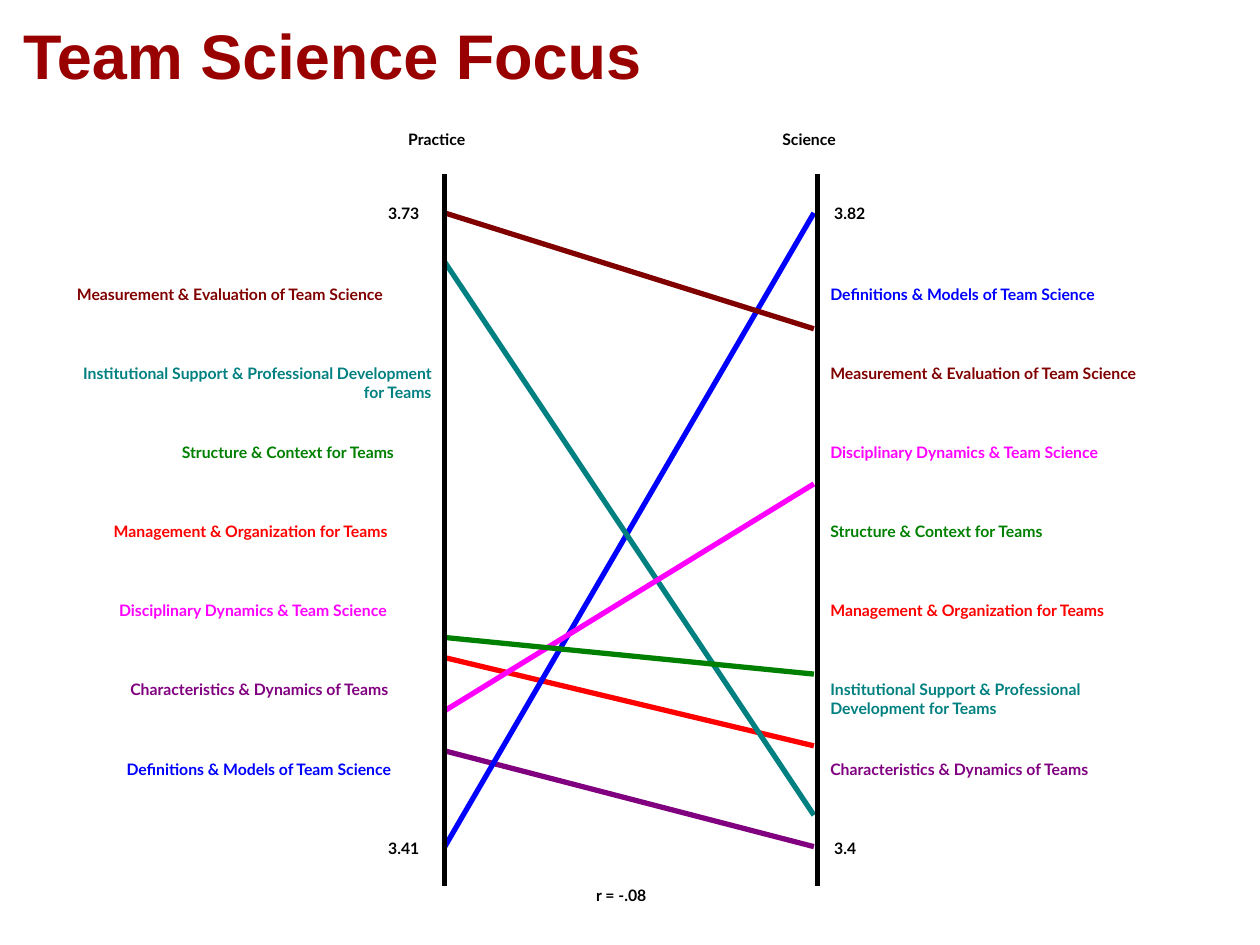
import collections

import pptx
import pptx.dml.color
import pptx.enum.shapes
import pptx.enum.text
import pptx.oxml.ns
import pptx.util
from lxml import etree

Pt = pptx.util.Pt
ALIGN = pptx.enum.text.PP_ALIGN
ANCHOR = pptx.enum.text.MSO_ANCHOR

Theme = collections.namedtuple("Theme", "name color width practice science")

# Each theme: label width, then height of its line on the two axes (points)
THEMES = [
    Theme("Management & Organization for Teams", "FF0000", 181.5, 375.8, 426.2),
    Theme("Characteristics & Dynamics of Teams", "800080", 172, 429.1, 483.8),
    Theme("Definitions & Models of Team Science", "0000FF", 174.2, 483.8, 121.7),
    Theme("Institutional Support & Professional Development for Teams",
          "008080", 204.5, 149.8, 465.8),
    Theme("Disciplinary Dynamics & Team Science", "FF00FF", 178.5, 406.1, 276.5),
    Theme("Measurement & Evaluation of Team Science", "800000", 202.5, 121.7, 187.9),
    Theme("Structure & Context for Teams", "008000", 142.6, 364.3, 385.2),
]
WRAPPED = {"Institutional Support & Professional Development for Teams"}
SCIENCE_WRAP_WIDTH = 179.3

PRACTICE_AXIS, SCIENCE_AXIS = 254.2, 467
AXIS_TOP, AXIS_BOTTOM = 99.4, 506.2
LINE_START, LINE_END = 254.2, 465.1
PRACTICE_LABEL_RIGHT, SCIENCE_LABEL_LEFT = 246.5, 474.5
FIRST_LABEL, LABEL_STEP = 162.7, 45.2


def rgb(color):
    return pptx.dml.color.RGBColor.from_string(color)


def write(frame, text, *, size, font, color, align=ALIGN.LEFT):
    paragraph = frame.paragraphs[0]
    paragraph.alignment = align
    run = paragraph.add_run()
    run.text = text
    run.font.size = Pt(size)
    run.font.name = font
    run.font.bold = True
    run.font.color.rgb = rgb(color)


class SlideBuilder:
    title_font = "Arial"
    label_font = "Lato"
    label_size = 9
    line_width = 3

    def __init__(self, slide):
        self.slide = slide

    def title(self, text, left, top, width, height):
        shape = self.slide.shapes.title
        shape.left, shape.top = Pt(left), Pt(top)
        shape.width, shape.height = Pt(width), Pt(height)
        shape.text_frame.vertical_anchor = ANCHOR.MIDDLE
        write(shape.text_frame, text, size=36, font=self.title_font, color="990000")

    def label(self, text, left, top, width, color="000000", wrap=False, align=ALIGN.LEFT):
        height = 21.6 if wrap else 13.7
        shape = self.slide.shapes.add_textbox(Pt(left), Pt(top), Pt(width), Pt(height))
        frame = shape.text_frame
        frame.margin_left = frame.margin_right = Pt(0)
        frame.margin_top = frame.margin_bottom = Pt(0)
        frame.word_wrap = wrap
        frame.auto_size = pptx.enum.text.MSO_AUTO_SIZE.SHAPE_TO_FIT_TEXT
        write(frame, text, size=self.label_size, font=self.label_font,
              color=color, align=align)

    def line(self, x1, y1, x2, y2, color="000000"):
        connector = self.slide.shapes.add_connector(
            pptx.enum.shapes.MSO_CONNECTOR.STRAIGHT, Pt(x1), Pt(y1), Pt(x2), Pt(y2))
        connector.line.color.rgb = rgb(color)
        connector.line.width = Pt(self.line_width)
        etree.SubElement(connector._element.spPr, pptx.oxml.ns.qn("a:effectLst"))


def main():
    presentation = pptx.Presentation()
    presentation.slide_width, presentation.slide_height = Pt(720), Pt(540)
    builder = SlideBuilder(presentation.slides.add_slide(presentation.slide_layouts[5]))

    builder.title("Team Science Focus", 6, 6, 708, 50)

    # Axis headings, end values and correlation
    for text, left, top, width in [
        ("r = -.08", 340.6, 506.2, 38.9),
        ("Practice", 233.3, 74.2, 41),
        ("Science", 447.1, 74.2, 38.9),
        (" 3.73", 219.6, 116.6, 27.4),
        (" 3.41", 219.6, 479.5, 27.4),
        (" 3.82", 474.5, 116.6, 27.4),
        (" 3.4", 474.5, 479.5, 21.6),
    ]:
        builder.label(text, left, top, width)

    # Theme lines between the axes
    for theme in THEMES:
        builder.line(LINE_START, theme.practice, LINE_END, theme.science, theme.color)

    # Theme labels, ranked on each side by line height
    for rank, theme in enumerate(sorted(THEMES, key=lambda theme: theme.practice)):
        wrap = theme.name in WRAPPED
        builder.label(theme.name, PRACTICE_LABEL_RIGHT - theme.width,
                      FIRST_LABEL + rank * LABEL_STEP, theme.width, theme.color,
                      wrap, ALIGN.RIGHT if wrap else ALIGN.LEFT)
    for rank, theme in enumerate(sorted(THEMES, key=lambda theme: theme.science)):
        wrap = theme.name in WRAPPED
        builder.label(theme.name, SCIENCE_LABEL_LEFT, FIRST_LABEL + rank * LABEL_STEP,
                      SCIENCE_WRAP_WIDTH if wrap else theme.width, theme.color, wrap)

    # Vertical axes
    for x in (PRACTICE_AXIS, SCIENCE_AXIS):
        builder.line(x, AXIS_TOP, x, AXIS_BOTTOM)

    presentation.save("out.pptx")


if __name__ == "__main__":
    main()
